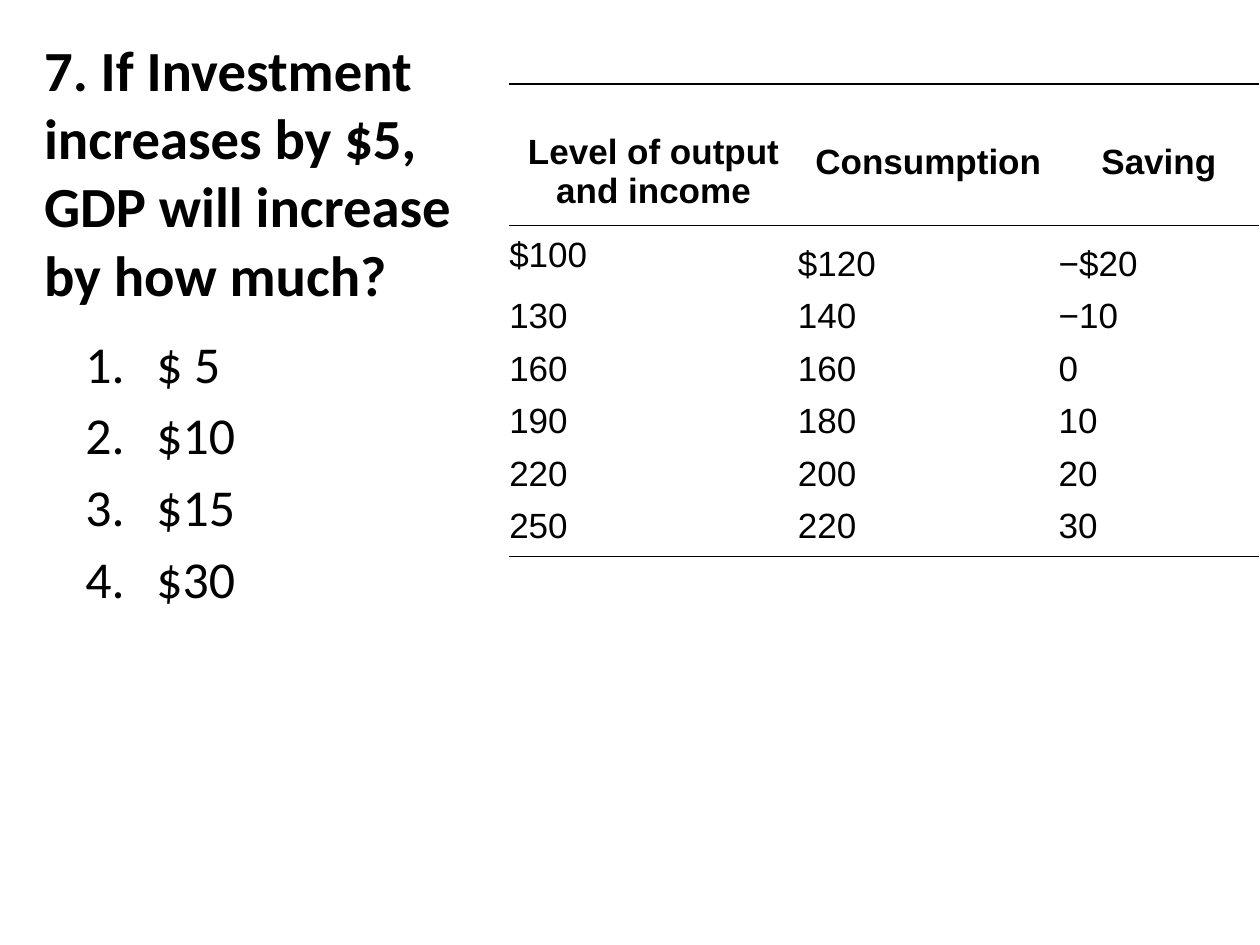
from lxml import etree
from pptx import Presentation
from pptx.dml.color import RGBColor
from pptx.enum import text
from pptx.oxml.ns import qn
from pptx.util import Pt

BLACK = RGBColor(0, 0, 0)


def style(p, **formats):
    p.font.color.rgb = BLACK
    for name, value in formats.items():
        setattr(p.font, name, value)


def border(cell, side, visible):
    ln = etree.SubElement(cell._tc.get_or_add_tcPr(), qn("a:ln" + side), w=str(Pt(1)))
    if visible:
        fill = etree.SubElement(ln, qn("a:solidFill"))
        etree.SubElement(fill, qn("a:srgbClr"), val=str(BLACK))
    else:
        etree.SubElement(ln, qn("a:noFill"))


prs = Presentation()
prs.slide_width, prs.slide_height = Pt(720), Pt(540)
s = prs.slides.add_slide(prs.slide_layouts[5])

# Question
sp = s.shapes.title
sp.left, sp.top, sp.width, sp.height = Pt(18), Pt(21.6), Pt(258), Pt(152.6)
tf = sp.text_frame
tf.text = "7. If Investment increases by $5, GDP will increase by how much?"
tf.word_wrap = True
tf.auto_size = text.MSO_AUTO_SIZE.NONE
tf.vertical_anchor = text.MSO_ANCHOR.MIDDLE
tf.paragraphs[0].alignment = text.PP_ALIGN.LEFT
style(tf.paragraphs[0], name="Calibri", size=Pt(32.4), bold=True)

# Output, consumption and saving table
rows = [
    ("Level of output and income", "Consumption", "Saving"),
    ("$100", "$120", "−$20"),
    ("130", "140", "−10"),
    ("160", "160", "0"),
    ("190", "180", "10"),
    ("220", "200", "20"),
    ("250", "220", "30"),
]
widths = [165, 149, 114.5]
heights = [81, 35, 30, 30, 30, 30, 34]
last = len(rows) - 1
table = s.shapes.add_table(len(rows), len(widths), Pt(291), Pt(48),
                           Pt(sum(widths)), Pt(sum(heights))).table
table.first_row = table.horz_banding = False
for column, width in zip(table.columns, widths):
    column.width = Pt(width)
for i, (row, values) in enumerate(zip(table.rows, rows)):
    row.height = Pt(heights[i])
    for j, value in enumerate(values):
        cell = row.cells[j]
        cell.text = value
        cell.margin_left = cell.margin_right = 0
        cell.margin_top = Pt(5.75)
        cell.margin_bottom = Pt(3.5 if i == last else 0)
        if i == 0:
            cell.margin_top = Pt(28 if j == 0 else 33.5)
        elif i == 1 and j > 0:
            cell.margin_top = Pt(11)
        p = cell.text_frame.paragraphs[0]
        p.alignment = text.PP_ALIGN.CENTER if i == 0 else text.PP_ALIGN.LEFT
        style(p, name="Arial", size=Pt(20), bold=i == 0)
        for side, visible in (("L", False), ("R", False),
                              ("T", i <= 1), ("B", i in (0, last))):
            border(cell, side, visible)
        cell.fill.background()

# Numbered answers
sp = s.shapes.add_textbox(Pt(41.75), Pt(185.75), Pt(102), Pt(174))
tf = sp.text_frame
tf.word_wrap = True
for i, answer in enumerate(["$ 5", "$10", "$15", "$30"]):
    p = tf.paragraphs[0] if i == 0 else tf.add_paragraph()
    p.text = answer
    p.space_before = Pt(5.5)
    style(p, name="Calibri", size=Pt(29.6))
    pPr = p._p.get_or_add_pPr()
    pPr.set("marL", str(Pt(40.5)))
    pPr.set("indent", str(-Pt(40.5)))
    number = etree.Element(qn("a:buAutoNum"), type="arabicPeriod")
    pPr.find(qn("a:defRPr")).addprevious(number)

prs.save("out.pptx")
